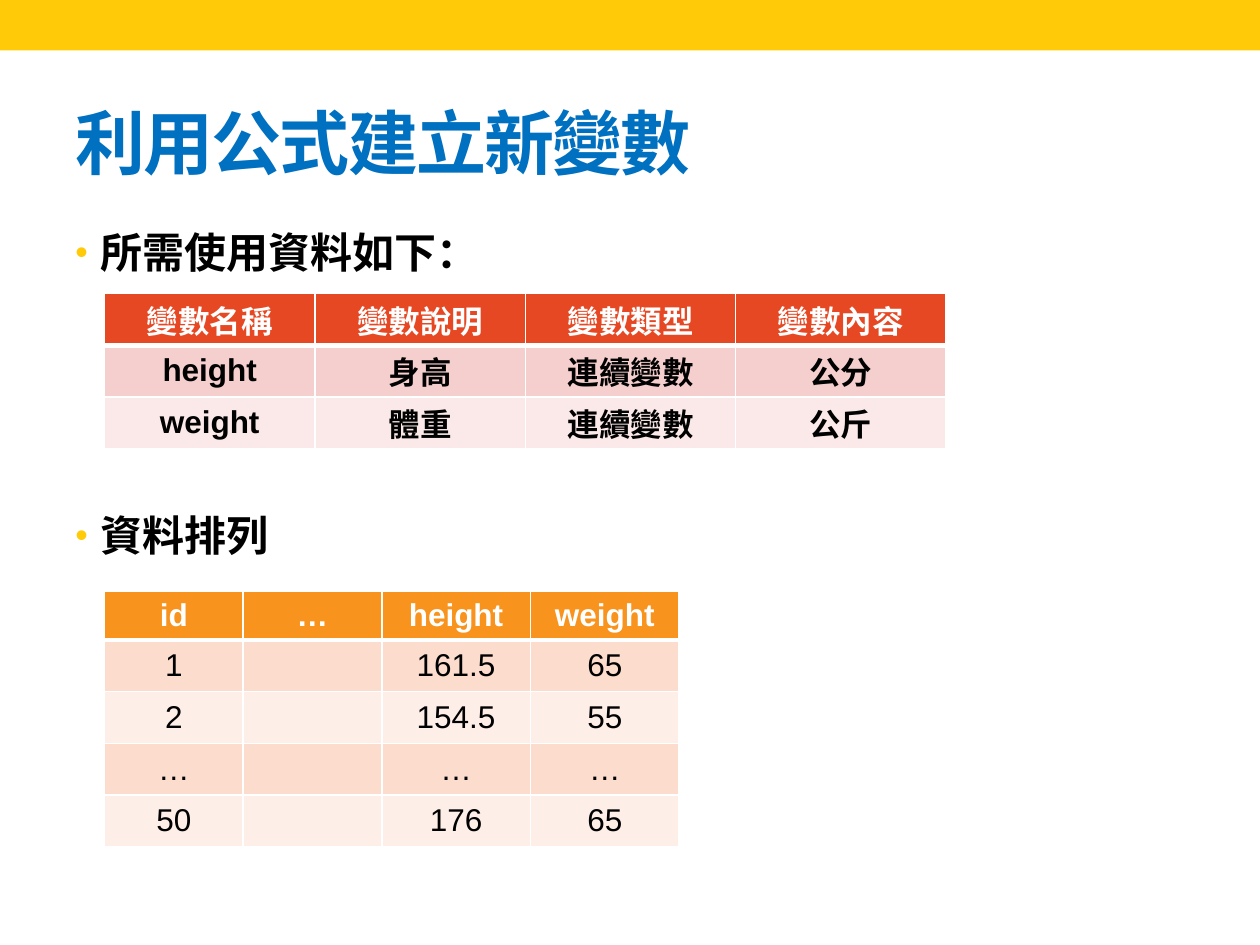
from dataclasses import dataclass

from lxml import etree
from pptx import Presentation
from pptx.dml.color import RGBColor
from pptx.enum.shapes import MSO_SHAPE
from pptx.enum.text import MSO_ANCHOR, PP_ALIGN
from pptx.oxml.ns import qn
from pptx.util import Inches, Pt

RECTANGLE = MSO_SHAPE.RECTANGLE
MIDDLE = MSO_ANCHOR.MIDDLE
CENTER = PP_ALIGN.CENTER

FONT = "Arial"
YELLOW, BLUE, BLACK, WHITE = "FFCA08", "0070C0", "000000", "FFFFFF"
THIN, THICK = 1, 3


@dataclass
class DataTable:
    left: float
    top: float
    column_widths: list[float]
    row_heights: list[float]
    rows: list[list[str]]
    header_fill: str
    band_fills: tuple[str, str]
    bold_body: bool


VARIABLE_TABLE = DataTable(
    0.83, 2.33, [1.67] * 4, [0.41] * 3,
    [
        ["變數名稱", "變數說明", "變數類型", "變數內容"],
        ["height", "身高", "連續變數", "公分"],
        ["weight", "體重", "連續變數", "公斤"],
    ],
    "E64823", ("F5CFCD", "FAE9E8"), True,
)
LAYOUT_TABLE = DataTable(
    0.83, 4.69, [1.1, 1.1, 1.18, 1.18], [0.39] + [0.41] * 4,
    [
        ["id", "…", "height", "weight"],
        ["1", "", "161.5", "65"],
        ["2", "", "154.5", "55"],
        ["…", "", "…", "…"],
        ["50", "", "176", "65"],
    ],
    "F8931D", ("FCDCCD", "FEEEE8"), False,
)


def rgb(color: str) -> RGBColor:
    return RGBColor.from_string(color)


def format_paragraph(paragraph, size: float, color: str, bold: bool) -> None:
    for font in [paragraph.font] + [run.font for run in paragraph.runs]:
        font.name = FONT
        font.size = Pt(size)
        font.bold = bold
        font.color.rgb = rgb(color)


def add_text_frame(slide, left: float, top: float, width: float, height: float):
    text_frame = slide.shapes.add_textbox(
        Inches(left), Inches(top), Inches(width), Inches(height)).text_frame
    text_frame.word_wrap = True
    return text_frame


def add_bullet(paragraph) -> None:
    properties = paragraph._p.get_or_add_pPr()
    properties.set("marL", str(Inches(0.2)))
    properties.set("indent", str(-Inches(0.2)))
    color = etree.SubElement(properties, qn("a:buClr"))
    etree.SubElement(color, qn("a:srgbClr"), val=YELLOW)
    etree.SubElement(properties, qn("a:buSzPct"), val="85000")
    etree.SubElement(properties, qn("a:buFont"), typeface=FONT)
    etree.SubElement(properties, qn("a:buChar"), char="•")


def set_borders(cell, top: int, bottom: int) -> None:
    properties = cell._tc.get_or_add_tcPr()
    widths = {"a:lnL": THIN, "a:lnR": THIN, "a:lnT": top, "a:lnB": bottom}
    for position, (tag, width) in enumerate(widths.items()):
        line = etree.Element(qn(tag), w=str(Pt(width)))
        fill = etree.SubElement(line, qn("a:solidFill"))
        etree.SubElement(fill, qn("a:srgbClr"), val=WHITE)
        properties.insert(position, line)


def add_data_table(slide, data: DataTable) -> None:
    table = slide.shapes.add_table(
        len(data.rows), len(data.column_widths), Inches(data.left), Inches(data.top),
        Inches(sum(data.column_widths)), Inches(sum(data.row_heights))).table
    for column, width in zip(table.columns, data.column_widths):
        column.width = Inches(width)
    for row, height in zip(table.rows, data.row_heights):
        row.height = Inches(height)
    for row_index, texts in enumerate(data.rows):
        is_header = row_index == 0
        fill = data.header_fill if is_header else data.band_fills[(row_index - 1) % 2]
        for column_index, text in enumerate(texts):
            cell = table.cell(row_index, column_index)
            cell.fill.solid()
            cell.fill.fore_color.rgb = rgb(fill)
            cell.margin_left = cell.margin_right = Inches(0.02)
            cell.margin_top = cell.margin_bottom = 0
            cell.vertical_anchor = MIDDLE
            cell.text_frame.text = text
            paragraph = cell.text_frame.paragraphs[0]
            paragraph.alignment = CENTER
            format_paragraph(paragraph, 18, WHITE if is_header else BLACK,
                             is_header or data.bold_body)
            set_borders(cell, top=THICK if row_index == 1 else THIN,
                        bottom=THICK if is_header else THIN)


def main() -> None:
    presentation = Presentation()
    presentation.slide_width = Inches(10)
    presentation.slide_height = Inches(7.5)
    slide = presentation.slides.add_slide(presentation.slide_layouts[6])

    # Top band
    band = slide.shapes.add_shape(RECTANGLE, 0, 0, Inches(10), Inches(0.4))
    band.shadow.inherit = False
    band.fill.solid()
    band.fill.fore_color.rgb = rgb(YELLOW)
    band.line.fill.background()

    # Title, slightly condensed
    title = add_text_frame(slide, 0.5, 0.58, 9, 1.08)
    title.vertical_anchor = MIDDLE
    title.text = "利用公式建立新變數"
    format_paragraph(title.paragraphs[0], 40, BLUE, True)
    title.paragraphs[0].runs[0].font._element.set("spc", "-100")

    # Bullets, the second one set below the first table
    body = add_text_frame(slide, 0.5, 1.75, 9, 5.33)
    body.text = "所需使用資料如下：\n資料排列"
    for paragraph, space_before in zip(body.paragraphs, (4.8, 133)):
        paragraph.space_before = Pt(space_before)
        format_paragraph(paragraph, 24, BLACK, True)
        add_bullet(paragraph)

    # Tables
    for data in (VARIABLE_TABLE, LAYOUT_TABLE):
        add_data_table(slide, data)

    presentation.save("out.pptx")


if __name__ == "__main__":
    main()
